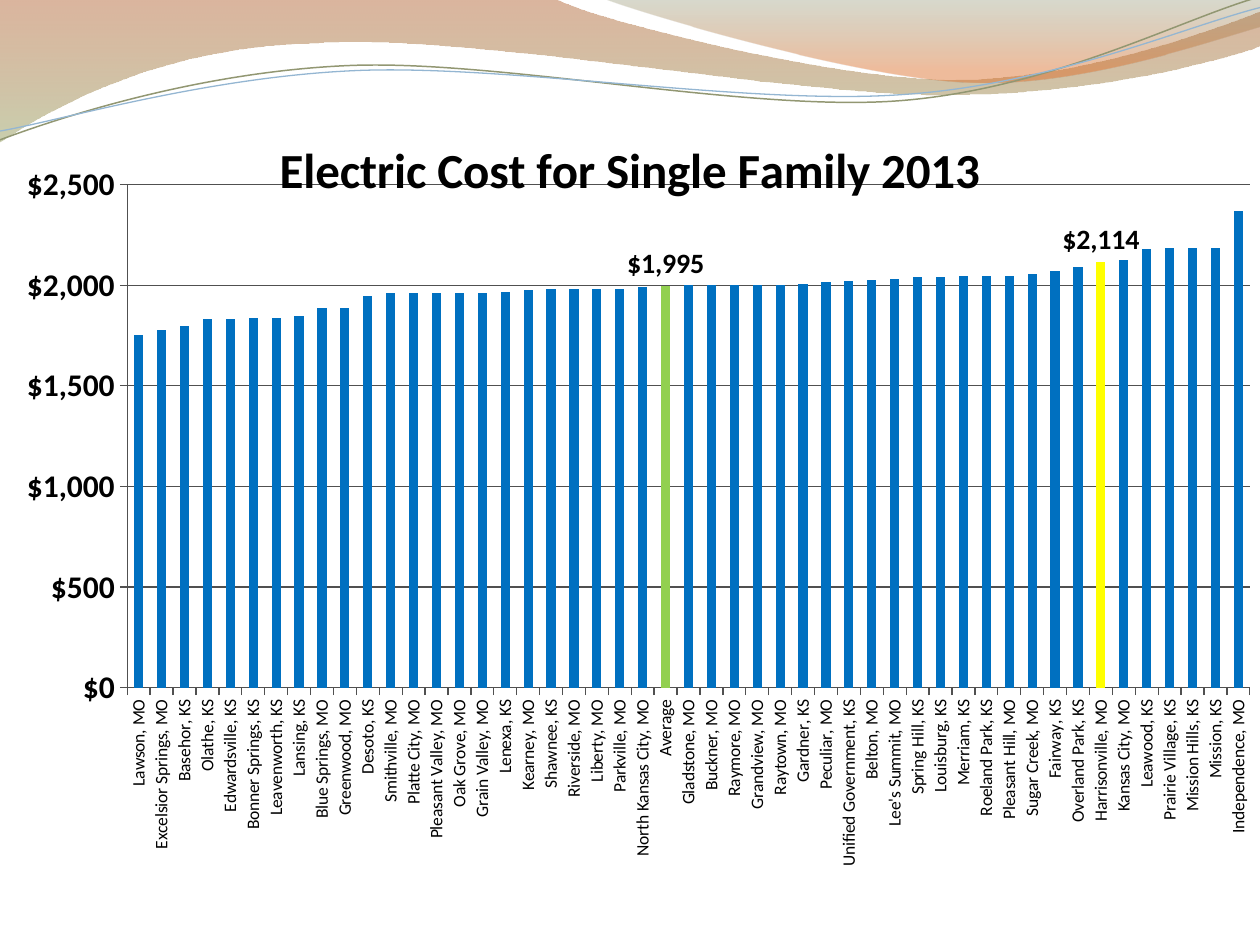
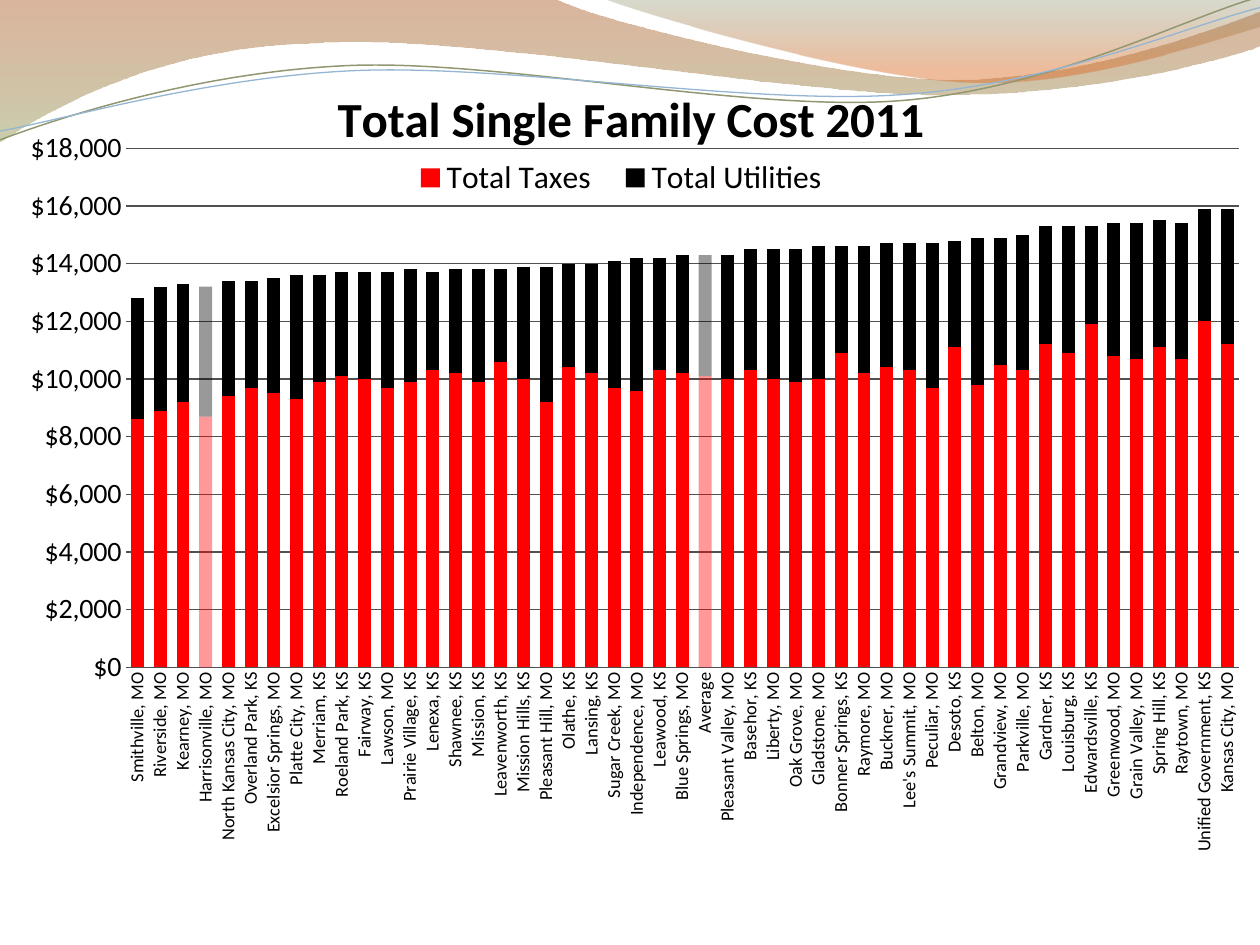
from math import cos, radians, sin

from lxml import etree
from pptx import Presentation
from pptx.chart.data import CategoryChartData
from pptx.dml.color import RGBColor
from pptx.enum.chart import XL_CHART_TYPE, XL_LABEL_POSITION, XL_LEGEND_POSITION, XL_TICK_MARK
from pptx.oxml import parse_xml
from pptx.oxml.ns import nsdecls, qn
from pptx.util import Inches, Pt

CLUSTERED = XL_CHART_TYPE.COLUMN_CLUSTERED
STACKED = XL_CHART_TYPE.COLUMN_STACKED
ABOVE_BAR = XL_LABEL_POSITION.OUTSIDE_END
BOTTOM = XL_LEGEND_POSITION.BOTTOM
TICK_OUT, TICK_NONE = XL_TICK_MARK.OUTSIDE, XL_TICK_MARK.NONE

BLACK = RGBColor(0x00, 0x00, 0x00)
GRID = RGBColor(0x50, 0x50, 0x50)
BLUE = RGBColor(0x00, 0x70, 0xC0)
GREEN = RGBColor(0x92, 0xD0, 0x50)
YELLOW = RGBColor(0xFF, 0xFF, 0x00)
RED = RGBColor(0xFF, 0x00, 0x00)
OLIVE = RGBColor(0x92, 0x97, 0x72)
SKY = RGBColor(0x94, 0xB6, 0xD2)
RUST = RGBColor(0xAF, 0x5C, 0x29)
MOSS = RGBColor(0x9D, 0xA6, 0x6B)
SAGE = RGBColor(0x7D, 0x83, 0x5B)
ORANGE = RGBColor(0xDD, 0x6B, 0x24)

FONT = "Calibri"
DOLLARS = r"\$#,##0"
TITLE_SIZE = 28
LINE_TILT = -2.7
LINE_CENTER = (4.99, 0.58)

# Wave outlines: a pair is a straight step, six numbers are a Bezier curve.
# Gradient stops: position %, colour, opacity %.
WAVE_FILLS = [
    ([(0, 0), (4.4, -0.01), (4.76, 0.17, 6.64, 0.63, 7.58, 0.63),
      (8.53, 0.63, 9.58, 0.26, 10, 0.09), (10.01, 0.36),
      (9.83, 0.44, 8.7, 0.76, 7.46, 0.75), (6.22, 0.75, 3.82, 0.28, 2.57, 0.34),
      (1.29, 0.36, 0.46, 0.83, -0.01, 1.13), (0, 0)],
     [(0, RUST, 45), (100, MOSS, 55)]),
    ([(4.79, -0.01), (5.09, 0.11, 6.82, 0.62, 7.69, 0.65),
      (8.56, 0.69, 9.61, 0.32, 10, 0.21), (10, 0), (4.79, -0.01)],
     [(0, SAGE, 30), (80, ORANGE, 45)]),
]
WAVE_LINES = [
    ([(0, 1.11), (0.48, 0.93, 1.58, 0.57, 2.77, 0.52), (3.95, 0.47, 5.93, 0.89, 7.13, 0.8),
      (8.33, 0.71, 9.38, 0.15, 9.98, -0.02)], OLIVE, 0.85),
    ([(0, 1.04), (0.47, 0.96, 1.64, 0.61, 2.83, 0.56), (4.03, 0.51, 5.97, 0.84, 7.17, 0.75),
      (8.36, 0.67, 9.41, 0.21, 10, 0.06)], SKY, 0.75),
]

ELECTRIC_COSTS = {
    "Lawson, MO": 1753, "Excelsior Springs, MO": 1778, "Basehor, KS": 1796,
    "Olathe, KS": 1830, "Edwardsville, KS": 1830, "Bonner Springs, KS": 1835,
    "Leavenworth, KS": 1839, "Lansing, KS": 1847, "Blue Springs, MO": 1889,
    "Greenwood, MO": 1889, "Desoto, KS": 1944, "Smithville, MO": 1963,
    "Platte City, MO": 1963, "Pleasant Valley, MO": 1963, "Oak Grove, MO": 1963,
    "Grain Valley, MO": 1963, "Lenexa, KS": 1966, "Kearney, MO": 1976,
    "Shawnee, KS": 1980, "Riverside, MO": 1982, "Liberty, MO": 1982,
    "Parkville, MO": 1982, "North Kansas City, MO": 1991, "Average": 1995,
    "Gladstone, MO": 2001, "Buckner, MO": 2001, "Raymore, MO": 2001,
    "Grandview, MO": 2001, "Raytown, MO": 2001, "Gardner, KS": 2004,
    "Peculiar, MO": 2015, "Unified Government, KS": 2023, "Belton, MO": 2024,
    "Lee's Summit, MO": 2029, "Spring Hill, KS": 2041, "Louisburg, KS": 2041,
    "Merriam, KS": 2046, "Roeland Park, KS": 2046, "Pleasant Hill, MO": 2047,
    "Sugar Creek, MO": 2057, "Fairway, KS": 2070, "Overland Park, KS": 2089,
    "Harrisonville, MO": 2114, "Kansas City, MO": 2126, "Leawood, KS": 2178,
    "Prairie Village, KS": 2183, "Mission Hills, KS": 2185, "Mission, KS": 2185,
    "Independence, MO": 2369,
}
# Taxes, utilities
TOTAL_COSTS = {
    "Smithville, MO": (8600, 4200), "Riverside, MO": (8900, 4300),
    "Kearney, MO": (9200, 4100), "Harrisonville, MO": (8700, 4500),
    "North Kansas City, MO": (9400, 4000), "Overland Park, KS": (9700, 3700),
    "Excelsior Springs, MO": (9500, 4000), "Platte City, MO": (9300, 4300),
    "Merriam, KS": (9900, 3700), "Roeland Park, KS": (10100, 3600),
    "Fairway, KS": (10000, 3700), "Lawson, MO": (9700, 4000),
    "Prairie Village, KS": (9900, 3900), "Lenexa, KS": (10300, 3400),
    "Shawnee, KS": (10200, 3600), "Mission, KS": (9900, 3900),
    "Leavenworth, KS": (10600, 3200), "Mission Hills, KS": (10000, 3900),
    "Pleasant Hill, MO": (9200, 4700), "Olathe, KS": (10400, 3600),
    "Lansing, KS": (10200, 3800), "Sugar Creek, MO": (9700, 4400),
    "Independence, MO": (9600, 4600), "Leawood, KS": (10300, 3900),
    "Blue Springs, MO": (10200, 4100), "Average": (10100, 4200),
    "Pleasant Valley, MO": (10000, 4300), "Basehor, KS": (10300, 4200),
    "Liberty, MO": (10000, 4500), "Oak Grove, MO": (9900, 4600),
    "Gladstone, MO": (10000, 4600), "Bonner Springs, KS": (10900, 3700),
    "Raymore, MO": (10200, 4400), "Buckner, MO": (10400, 4300),
    "Lee's Summit, MO": (10300, 4400), "Peculiar, MO": (9700, 5000),
    "Desoto, KS": (11100, 3700), "Belton, MO": (9800, 5100),
    "Grandview, MO": (10500, 4400), "Parkville, MO": (10300, 4700),
    "Gardner, KS": (11200, 4100), "Louisburg, KS": (10900, 4400),
    "Edwardsville, KS": (11900, 3400), "Greenwood, MO": (10800, 4600),
    "Grain Valley, MO": (10700, 4700), "Spring Hill, KS": (11100, 4400),
    "Raytown, MO": (10700, 4700), "Unified Government, KS": (12000, 3900),
    "Kansas City, MO": (11200, 4700),
}


def set_values(target, **values):
    for name, value in values.items():
        setattr(target, name, value)


def style_font(font, size, bold=False):
    set_values(font, name=FONT, size=Pt(size), bold=bold)
    font.color.rgb = BLACK


def paint(fill, color):
    fill.solid()
    fill.fore_color.rgb = color


def turn(point, degrees):
    """Turn a point about the middle of the wave lines."""
    angle = radians(degrees)
    across, down = point[0] - LINE_CENTER[0], point[1] - LINE_CENTER[1]
    return (LINE_CENTER[0] + across * cos(angle) - down * sin(angle),
            LINE_CENTER[1] + across * sin(angle) + down * cos(angle))


def add_outline(shapes, steps, close, tilt=0):
    """Draw a freeform through straight and Bezier steps."""
    points = [turn(step[i:i + 2], -tilt) for step in steps for i in range(0, len(step), 2)]
    points = [(Inches(x), Inches(y)) for x, y in points]
    builder = shapes.build_freeform(*points[0])
    builder.add_line_segments(points[1:], close=close)
    outline = builder.convert_to_shape()
    outline.rotation = tilt
    outline.shadow.inherit = False
    segments = iter(list(outline._element.iter(qn("a:lnTo"))))
    for step in steps[1:]:
        first = next(segments)
        if len(step) == 6:
            first.tag = qn("a:cubicBezTo")
            for extra in (next(segments), next(segments)):
                first.append(extra[0])
                extra.getparent().remove(extra)
    return outline


def fade_down(shape, stops):
    """Fill a shape with a see-through gradient from top to bottom."""
    marks = "".join(
        f'<a:gs pos="{place * 1000}"><a:srgbClr val="{color}">'
        f'<a:alpha val="{opacity * 1000}"/></a:srgbClr></a:gs>'
        for place, color, opacity in stops)
    gradient = parse_xml(f'<a:gradFill {nsdecls("a")} rotWithShape="1"><a:gsLst>{marks}</a:gsLst>'
                         '<a:lin ang="5400000" scaled="0"/></a:gradFill>')
    shape._element.spPr.find(qn("a:custGeom")).addnext(gradient)


def add_waves(page):
    for steps, stops in WAVE_FILLS:
        wave = add_outline(page.shapes, steps, close=True)
        fade_down(wave, stops)
        wave.line.fill.background()
    lines = page.shapes.add_group_shape().shapes
    for steps, color, width in WAVE_LINES:
        wave = add_outline(lines, steps, close=False, tilt=LINE_TILT)
        wave.fill.background()
        wave.line.color.rgb = color
        wave.line.width = Pt(width)


def place_part(part, inner=False, **fractions):
    """Fix a title, legend or plot area at fractions of the chart."""
    for old in part.findall(qn("c:layout")):
        part.remove(old)
    layout = etree.Element(qn("c:layout"))
    manual = etree.SubElement(layout, qn("c:manualLayout"))
    settings = {"layoutTarget": "inner"} if inner else {}
    settings.update(xMode="edge", yMode="edge", **fractions)
    for name, value in settings.items():
        etree.SubElement(manual, qn(f"c:{name}")).set("val", str(value))
    before = [child for child in part if child.tag in (qn("c:tx"), qn("c:legendPos"))]
    if before:
        before[-1].addnext(layout)
    else:
        part.insert(0, layout)


def add_cost_chart(page, box, kind, title, title_place, plot, categories, series, gap):
    """Add a column chart; series holds name, values and colour triples."""
    data = CategoryChartData(number_format=DOLLARS)
    data.categories = categories
    for name, values, _ in series:
        data.add_series(name, values)
    chart = page.shapes.add_chart(kind, *map(Inches, box), data).chart
    style_font(chart.font, 10)
    chart.has_legend = False
    chart.has_title = True
    frame = chart.chart_title.text_frame
    frame.text = title
    style_font(frame.paragraphs[0].runs[0].font, TITLE_SIZE, bold=True)
    chart.chart_title.include_in_layout = False
    place_part(chart.chart_title._element, **title_place)
    place_part(chart._chartSpace.chart.plotArea, inner=True, **plot)
    set_values(chart.plots[0], gap_width=gap, vary_by_categories=False)
    for bars, (_, _, color) in zip(chart.plots[0].series, series):
        paint(bars.format.fill, color)
        bars.invert_if_negative = False
    return chart


def style_axes(chart, tick, label_size, cost_size, cost_bold, top, step):
    names, costs = chart.category_axis, chart.value_axis
    set_values(costs, minimum_scale=0, maximum_scale=top, major_unit=step,
               has_major_gridlines=True)
    for axis in (names, costs):
        set_values(axis, major_tick_mark=tick, minor_tick_mark=TICK_NONE)
    for part in (names, costs, costs.major_gridlines):
        part.format.line.color.rgb = GRID
        part.format.line.width = Pt(0.75)
    set_values(costs.tick_labels, number_format=DOLLARS, number_format_is_linked=False)
    style_font(costs.tick_labels.font, cost_size, cost_bold)
    style_font(names.tick_labels.font, label_size)
    names._element.txPr.find(qn("a:bodyPr")).set("rot", "-5400000")


def electric_slide(page, box):
    names = list(ELECTRIC_COSTS)
    chart = add_cost_chart(
        page, box, CLUSTERED, "Electric Cost for Single Family 2013", dict(x=0.215, y=0.029),
        dict(x=0.101, y=0.099, w=0.891, h=0.622), names,
        [("Series 1", ELECTRIC_COSTS.values(), BLUE)], gap=150)
    style_axes(chart, TICK_OUT, 10, 18, True, top=2500, step=500)
    for name, color in (("Average", GREEN), ("Harrisonville, MO", YELLOW)):
        bar = chart.plots[0].series[0].points[names.index(name)]
        paint(bar.format.fill, color)
        style_font(bar.data_label.font, 16, bold=True)
        bar.data_label.position = ABOVE_BAR


def total_slide(page, box):
    names = list(TOTAL_COSTS)
    taxes, utilities = zip(*TOTAL_COSTS.values())
    series = [("Total Taxes", taxes, RED), ("Total Utilities", utilities, BLACK)]
    chart = add_cost_chart(
        page, box, STACKED, "Total Single Family Cost 2011", dict(x=0.259, y=0.027),
        dict(x=0.097, y=0.107, w=0.89, h=0.582), names, series, gap=75)
    chart.plots[0].overlap = 100
    style_axes(chart, TICK_NONE, 10.5, 16, False, top=18000, step=2000)
    chart.value_axis.format.line.fill.background()
    chart.has_legend = True
    set_values(chart.legend, position=BOTTOM, include_in_layout=False)
    style_font(chart.legend.font, 18)
    place_part(chart.legend._element, x=0.313, y=0.11, w=0.36, h=0.06)
    for bars, (_, _, color) in zip(chart.plots[0].series, series):
        for name in ("Harrisonville, MO", "Average"):
            fill = bars.points[names.index(name)].format.fill
            paint(fill, color)
            tint = fill._xPr.find(qn("a:solidFill"))[0]
            etree.SubElement(tint, qn("a:alpha")).set("val", "40000")


def main():
    deck = Presentation()
    set_values(deck, slide_width=Inches(10), slide_height=Inches(7.5))
    for build, box in ((electric_slide, (0, 0.83, 10, 6.42)),
                       (total_slide, (0.04, 0.42, 9.92, 7.08))):
        page = deck.slides.add_slide(deck.slide_layouts[6])
        add_waves(page)
        build(page, box)
    deck.save("out.pptx")


if __name__ == "__main__":
    main()
